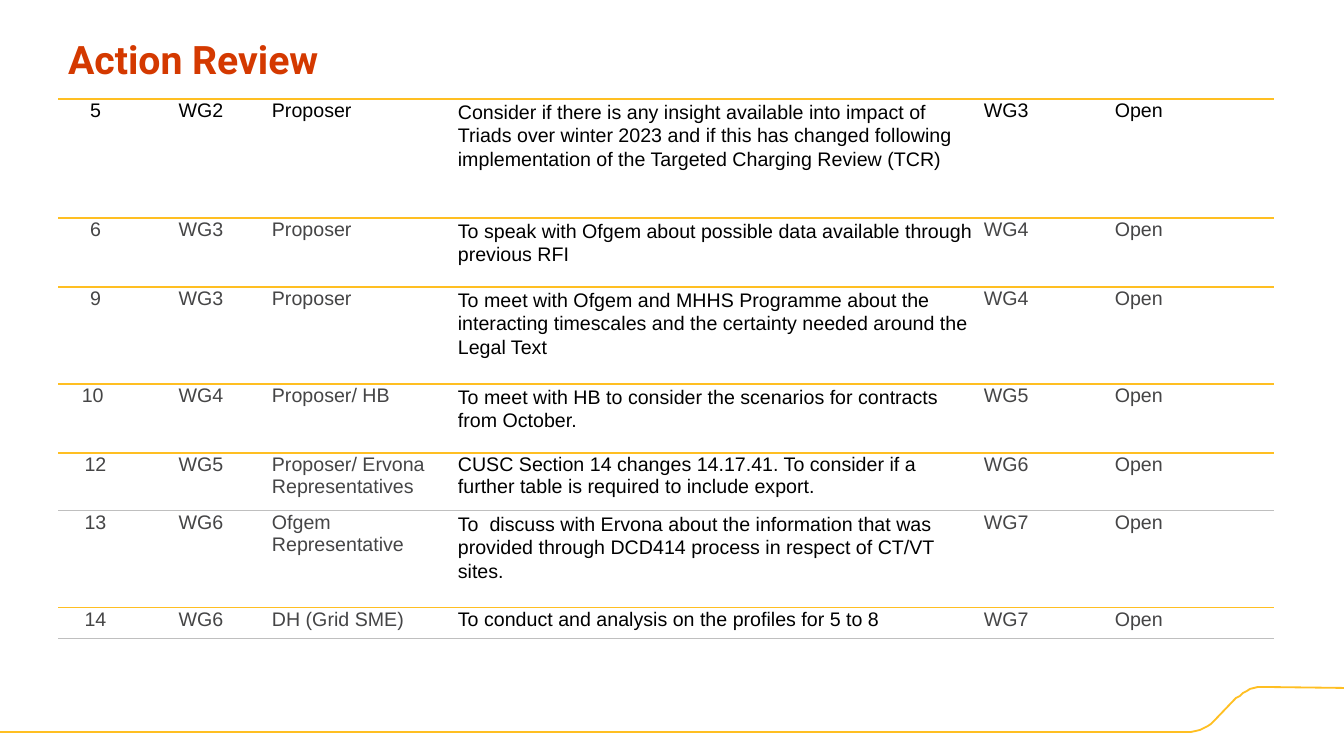
from dataclasses import dataclass

from lxml import etree
from pptx import Presentation
from pptx.dml.color import RGBColor
from pptx.enum.text import MSO_ANCHOR, MSO_AUTO_SIZE, PP_ALIGN
from pptx.oxml.ns import qn
from pptx.util import Pt

LEFT, CENTER = PP_ALIGN.LEFT, PP_ALIGN.CENTER
TOP = MSO_ANCHOR.TOP
NO_FIT = MSO_AUTO_SIZE.NONE

TITLE = "Action Review"
ACTIONS = [
    ("5", "WG2", "Proposer",
     "Consider if there is any insight available into impact of Triads over winter 2023 "
     "and if this has changed following implementation of the Targeted Charging Review (TCR)",
     "WG3", "Open"),
    ("6", "WG3", "Proposer",
     "To speak with Ofgem about possible data available through previous RFI",
     "WG4", "Open"),
    ("9", "WG3", "Proposer",
     "To meet with Ofgem and MHHS Programme about the interacting timescales "
     "and the certainty needed around the Legal Text",
     "WG4", "Open"),
    ("10 ", "WG4", "Proposer/ HB",
     "To meet with HB to consider the scenarios for contracts from October.",
     "WG5", "Open"),
    ("12", "WG5", "Proposer/ Ervona Representatives",
     "CUSC Section 14 changes 14.17.41. To consider if a further table is required "
     "to include export.",
     "WG6", "Open"),
    ("13", "WG6", "Ofgem Representative",
     "To  discuss with Ervona about the information that was provided through DCD414 "
     "process in respect of CT/VT sites.",
     "WG7", "Open"),
    ("14", "WG6", "DH (Grid SME)",
     "To conduct and analysis on the profiles for 5 to 8",
     "WG7", "Open"),
]
COL_WIDTHS = [75, 136, 186, 526, 131, 162]
ROW_HEIGHTS = [119, 69, 97, 69, 58, 97, 31]
CENTERED_COLS = (0, 1)
ACTION_COL = 3
TIGHT_ROWS = (4, 6)
GREY_RULES = (5, 7)
SWOOSH = [
    (1344, 688), (1263, 687), (1258, 687), (1254, 688), (1250, 689), (1247, 691),
    (1243, 693), (1240, 696), (1236, 698), (1214, 721), (1211, 724), (1208, 726),
    (1204, 728), (1200, 730), (1196, 731), (1191, 732), (1187, 732), (0, 732),
]


@dataclass(frozen=True)
class Theme:
    white: str = "FFFFFF"
    black: str = "000000"
    body: str = "454546"
    title: str = "D43900"
    gold: str = "FFBF22"
    grey: str = "BFBFBF"
    title_font: str = "Roboto"
    body_font: str = "Arial"
    title_size: int = 28
    body_size: int = 14


T = Theme()
SLIDE_W, SLIDE_H = 1344, 756
SCALE = 12192000 / SLIDE_W


def px(n):
    return round(n * SCALE)


def apply(obj, values):
    for name, value in values.items():
        setattr(obj, name, value)


def write(tf, text, font, size, color, bold=False, **para):
    p = tf.paragraphs[0]
    apply(p, para)
    r = p.add_run()
    r.text = text
    apply(r.font, {"name": font, "size": Pt(size), "bold": bold})
    r.font.color.rgb = RGBColor.from_string(color)


def set_borders(cell, top, bottom):
    tcPr = cell._tc.get_or_add_tcPr()
    edges = [("a:lnL", None), ("a:lnR", None), ("a:lnT", top), ("a:lnB", bottom)]
    for i, (tag, color) in enumerate(edges):
        ln = etree.Element(qn(tag), w=str(Pt(1)))
        if color:
            fill = etree.SubElement(ln, qn("a:solidFill"))
            etree.SubElement(fill, qn("a:srgbClr"), val=color)
        else:
            etree.SubElement(ln, qn("a:noFill"))
        tcPr.insert(i, ln)


def add_swoosh(s):
    fb = s.shapes.build_freeform(*SWOOSH[0], scale=SCALE)
    fb.add_line_segments(SWOOSH[1:], close=False)
    sp = fb.convert_to_shape()
    sp.shadow.inherit = False
    sp.fill.background()
    sp.line.color.rgb = RGBColor.from_string(T.gold)
    sp.line.width = Pt(1.29)


def add_title(s):
    sp = s.shapes.title
    apply(sp, {"left": px(58), "top": px(36), "width": px(1242), "height": px(62)})
    sp.fill.solid()
    sp.fill.fore_color.rgb = RGBColor.from_string(T.white)
    tf = sp.text_frame
    apply(tf, {"word_wrap": True, "auto_size": NO_FIT, "vertical_anchor": TOP,
               "margin_left": px(10), "margin_right": px(10),
               "margin_top": px(5), "margin_bottom": px(5)})
    write(tf, TITLE, T.title_font, T.title_size, T.title, True,
          alignment=LEFT, line_spacing=0.9, space_before=Pt(0), space_after=Pt(6))


def rule_color(i):
    return T.grey if i in GREY_RULES else T.gold


def add_actions(s):
    table = s.shapes.add_table(len(ACTIONS), len(COL_WIDTHS), px(58), px(99),
                               px(sum(COL_WIDTHS)), px(sum(ROW_HEIGHTS))).table
    apply(table, {"first_row": False, "horz_banding": False})
    for col, width in zip(table.columns, COL_WIDTHS):
        col.width = px(width)
    for i, (row, height) in enumerate(zip(table.rows, ROW_HEIGHTS)):
        row.height = px(height)
        for j, text in enumerate(ACTIONS[i]):
            cell = table.cell(i, j)
            apply(cell, {"margin_left": px(3), "margin_right": px(3),
                         "margin_top": px(1), "margin_bottom": px(1),
                         "vertical_anchor": TOP})
            if i == 0:
                cell.fill.solid()
                cell.fill.fore_color.rgb = RGBColor.from_string(T.white)
            else:
                cell.fill.background()
            set_borders(cell, rule_color(i), rule_color(i + 1))
            is_action = j == ACTION_COL
            tight = is_action and i in TIGHT_ROWS
            write(cell.text_frame, text, T.body_font, T.body_size,
                  T.black if is_action or i == 0 else T.body,
                  alignment=CENTER if j in CENTERED_COLS else LEFT,
                  line_spacing=1.07 if is_action and not tight else 1.0,
                  space_after=Pt(0 if tight else 6 if is_action else 3))


def main():
    prs = Presentation()
    apply(prs, {"slide_width": px(SLIDE_W), "slide_height": px(SLIDE_H)})
    s = prs.slides.add_slide(prs.slide_layouts[5])
    add_swoosh(s)
    add_title(s)
    add_actions(s)
    prs.save("out.pptx")


if __name__ == "__main__":
    main()
